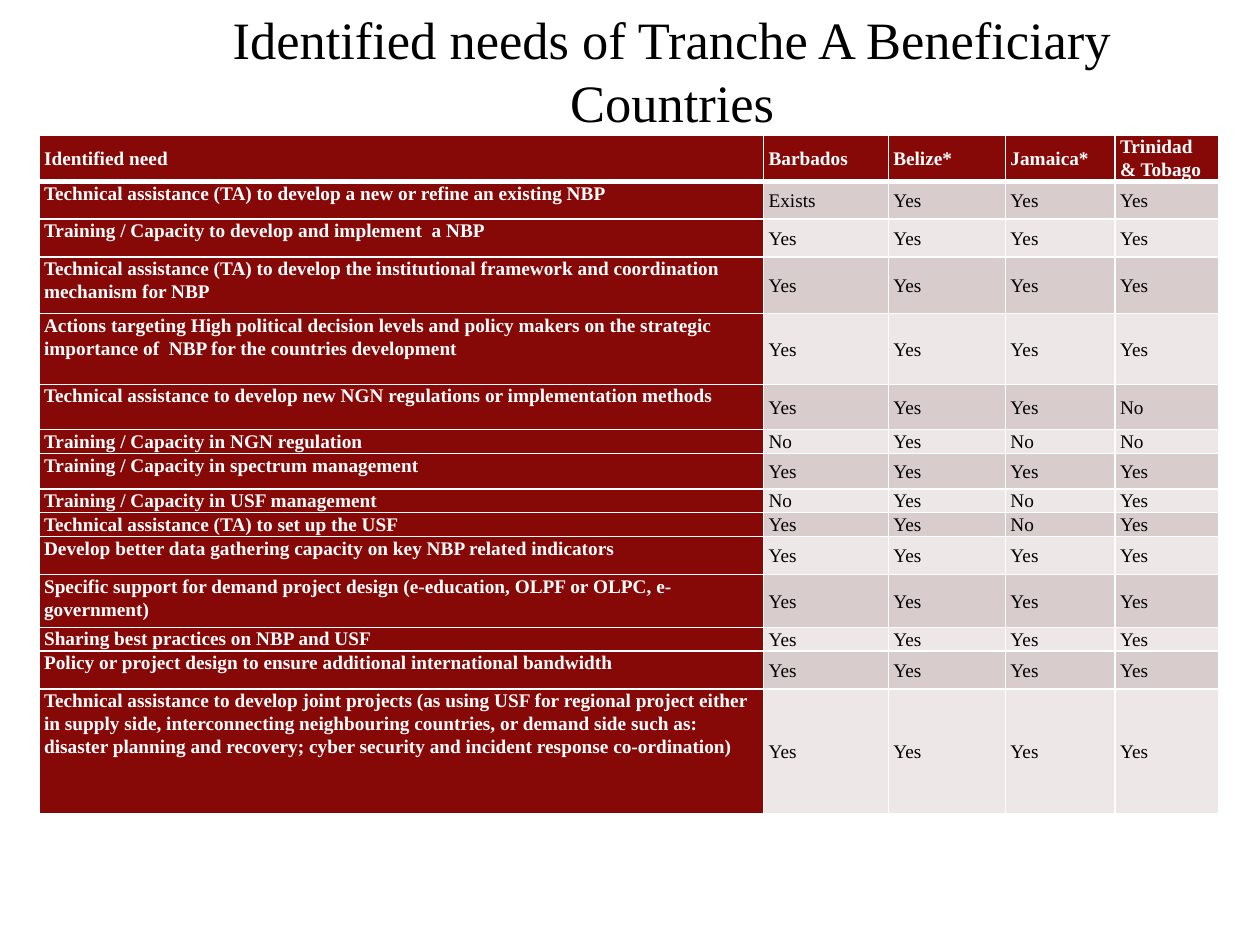
from lxml import etree
from pptx import Presentation, util as u
from pptx.dml.color import RGBColor
from pptx.enum import text
from pptx.oxml.ns import qn

MAROON = RGBColor(0x86, 0x09, 0x08)
ROSE = RGBColor(0xD9, 0xCC, 0xCC)
PALE = RGBColor(0xED, 0xE7, 0xE7)
WHITE = RGBColor(0xFF, 0xFF, 0xFF)
BLACK = RGBColor(0, 0, 0)

COLUMN_WIDTHS = [5.75, 0.99, 0.93, 0.87, 0.82]
HEADER = ["Identified need", "Barbados", "Belize*", "Jamaica*", "Trinidad & Tobago"]
HEADER_HEIGHT = 0.37
ALL_YES = ["Yes"] * 4

# Row height, need, answer of each country
NEEDS = [
    (0.3, "Technical assistance (TA) to develop a new or refine an existing NBP",
     ["Exists", "Yes", "Yes", "Yes"]),
    (0.3, "Training / Capacity to develop and implement  a NBP", ALL_YES),
    (0.45, "Technical assistance (TA) to develop the institutional framework and "
     "coordination mechanism for NBP", ALL_YES),
    (0.56, "Actions targeting High political decision levels and policy makers on the "
     "strategic importance of  NBP for the countries development", ALL_YES),
    (0.36, "Technical assistance to develop new NGN regulations or implementation methods",
     ["Yes", "Yes", "Yes", "No"]),
    (0.19, "Training / Capacity in NGN regulation", ["No", "Yes", "No", "No"]),
    (0.28, "Training / Capacity in spectrum management", ALL_YES),
    (0.19, "Training / Capacity in USF management", ["No", "Yes", "No", "Yes"]),
    (0.19, "Technical assistance (TA) to set up the USF", ["Yes", "Yes", "No", "Yes"]),
    (0.3, "Develop better data gathering capacity on key NBP related indicators", ALL_YES),
    (0.42, "Specific support for demand project design (e-education, OLPF or OLPC, "
     "e-government)", ALL_YES),
    (0.19, "Sharing best practices on NBP and USF", ALL_YES),
    (0.3, "Policy or project design to ensure additional international bandwidth", ALL_YES),
    (0.99, "Technical assistance to develop joint projects (as using USF for regional "
     "project either in supply side, interconnecting neighbouring countries, or demand "
     "side such as: disaster planning and recovery; cyber security and incident response "
     "co-ordination)", ALL_YES),
]


class SlideBuilder:
    """Style and current slide; positions are shares of the slide's size."""

    font_name = "Times New Roman"
    title_size = 30
    cell_size = 11

    def __init__(self, deck):
        self.deck = deck
        self.page = deck.slides.add_slide(deck.slide_layouts[6])

    def frame(self, left, top, width, height):
        wide, high = self.deck.slide_width, self.deck.slide_height
        return [int(v) for v in (left * wide, top * high, width * wide, height * high)]

    def style(self, para, size, color, bold=False):
        for span in para.runs:
            span.font.name = self.font_name
            span.font.size = u.Pt(size)
            span.font.bold = bold
            span.font.color.rgb = color

    def title(self, words, *shares):
        box = self.page.shapes.add_textbox(*self.frame(*shares))
        box.text_frame.word_wrap = True
        box.text_frame.text = words
        para = box.text_frame.paragraphs[0]
        para.alignment = text.PP_ALIGN.CENTER
        self.style(para, self.title_size, BLACK)

    def borders(self, cell, widths):
        """Draw white edges; the lines must come before the cell's fill."""
        properties = cell._tc.get_or_add_tcPr()
        for place, (edge, points) in enumerate(widths.items()):
            line = etree.Element(qn(f"a:{edge}"), w=str(u.Pt(points)))
            fill = etree.SubElement(line, qn("a:solidFill"))
            etree.SubElement(fill, qn("a:srgbClr"), val=str(WHITE))
            properties.insert(place, line)

    def cell(self, cell, words, fill, color, bold, middle, widths):
        cell.margin_left = cell.margin_right = u.Inches(0.04)
        cell.margin_top = cell.margin_bottom = 0
        cell.vertical_anchor = text.MSO_ANCHOR.MIDDLE if middle else text.MSO_ANCHOR.TOP
        cell.fill.solid()
        cell.fill.fore_color.rgb = fill
        self.borders(cell, widths)
        cell.text_frame.text = words
        para = cell.text_frame.paragraphs[0]
        para.line_spacing = 1.07
        para.space_after = u.Pt(8)
        self.style(para, self.cell_size, color, bold)

    def table(self, rows, heights, *shares):
        table = self.page.shapes.add_table(
            len(rows), len(COLUMN_WIDTHS), *self.frame(*shares)).table
        for column, width in zip(table.columns, COLUMN_WIDTHS):
            column.width = u.Inches(width)
        for r, (words, height) in enumerate(zip(rows, heights)):
            table.rows[r].height = u.Inches(height)
            # The header's lower edge is thicker than the rest
            widths = {"lnL": 1, "lnR": 1, "lnT": 3 if r == 1 else 1,
                      "lnB": 3 if r == 0 else 1}
            for c, word in enumerate(words):
                strong = r == 0 or c == 0
                band = ROSE if r % 2 else PALE
                self.cell(table.cell(r, c), word, MAROON if strong else band,
                          WHITE if strong else BLACK, strong, r == 0 or c > 0, widths)


def main():
    deck = Presentation()
    deck.slide_width, deck.slide_height = u.Inches(10), u.Inches(7.5)
    builder = SlideBuilder(deck)

    # Table of needs by country
    rows = [HEADER] + [[need] + answers for _, need, answers in NEEDS]
    heights = [HEADER_HEIGHT] + [height for height, _, _ in NEEDS]
    builder.table(rows, heights, 0.031, 1.07 / 7.5, 0.936, sum(heights) / 7.5)

    # Title
    builder.title("Identified needs of Tranche A Beneficiary Countries",
                  0.1, 0.01 / 7.5, 0.867, 0.95 / 7.5)

    deck.save("out.pptx")


if __name__ == "__main__":
    main()
